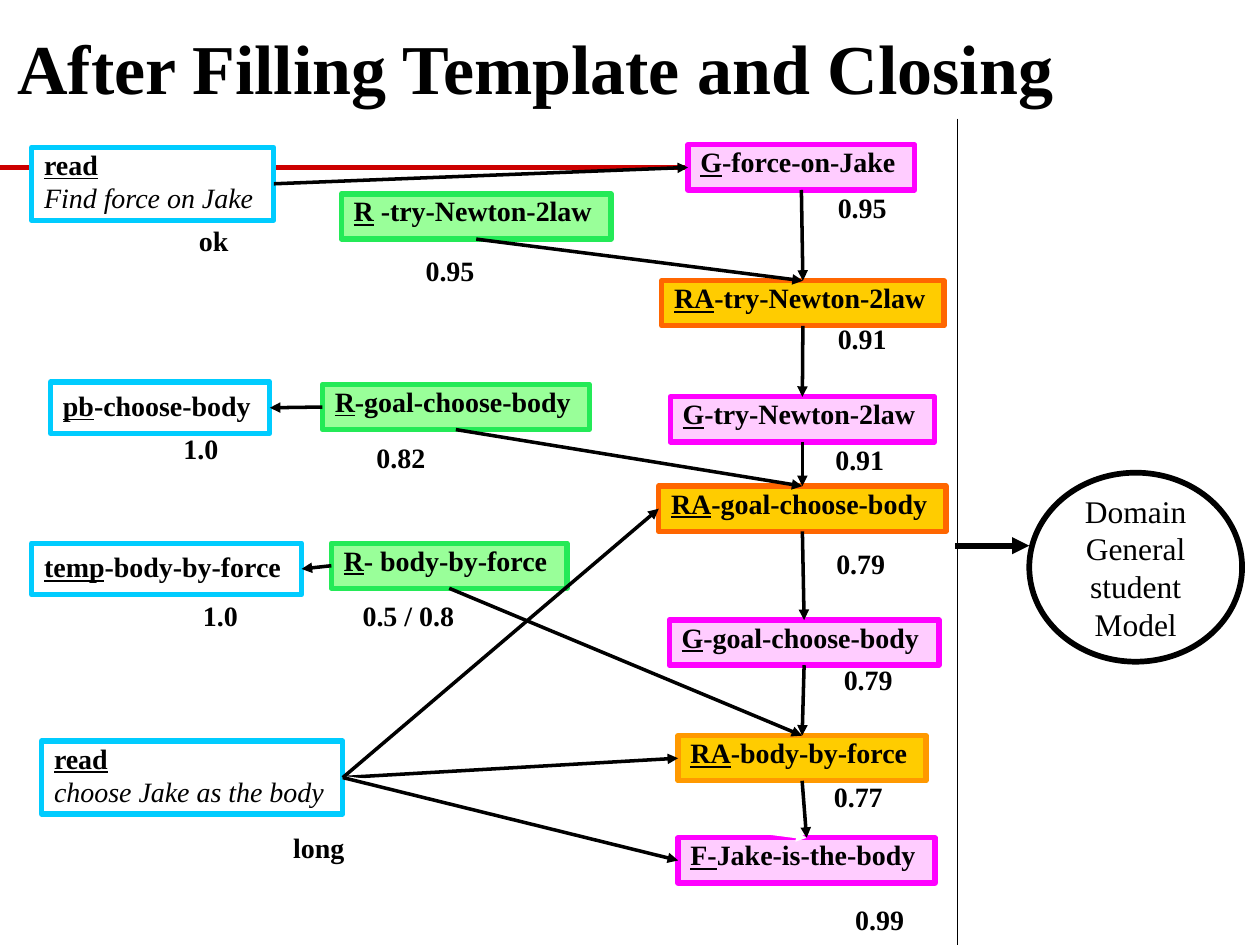
import pptx
import pptx.dml.color
import pptx.enum.shapes
import pptx.enum.text
import pptx.oxml.ns
import pptx.util
from lxml import etree
from pptx.util import Cm

FONT = "Times New Roman"
TOP, LEFT, BOTTOM, RIGHT = range(4)

# kind: fill, line
STYLES = {
    "read": ("FFFFFF", "00CCFF"),
    "rule": ("99FF99", "24EA57"),
    "goal": ("FFCCFF", "FF00FF"),
    "action": ("FFCC00", "FF6600"),
    "last action": ("FFCC00", "FF9900"),
}

# name: kind, underlined start, rest, second line, left, top, width, height, top inset
BOXES = {
    "RA goal": ("action", "RA", "-goal-choose-body", "", 13.28, 9.8, 5.79, 0.91, 0),
    "read force": ("read", "read", "", "Find force on Jake", 0.64, 2.97, 4.88, 1.47, 0),
    "read body": ("read", "read", "", "choose Jake as the body", 0.84, 14.94, 6.07, 1.47, 0),
    "F body": ("goal", "F-", "Jake-is-the-body", "", 13.67, 16.89, 5.18, 0.91, 0),
    "R goal": ("rule", "R", "-goal-choose-body", "", 6.5, 7.75, 5.38, 0.91, 0),
    "R body": ("rule", "R", "- body-by-force", "", 6.68, 10.95, 4.75, 0.91, 0),
    "RA body": ("last action", "RA", "-body-by-force", "", 13.67, 14.83, 5, 0.91, 0),
    "G goal": ("goal", "G", "-goal-choose-body", "", 13.49, 12.5, 5.44, 0.91, 0),
    "G force": ("goal", "G", "-force-on-Jake", "", 13.87, 2.92, 4.57, 0.91, 0),
    "G try": ("goal", "G", "-try-Newton-2law", "", 13.51, 8, 5.33, 0.91, 0),
    "RA try": ("action", "RA", "-try-Newton-2law", "", 13.34, 5.66, 5.69, 0.91, 0),
    "R try": ("rule", "R", " -try-Newton-2law", "", 6.88, 3.91, 5.44, 0.91, 0),
    "pb": ("read", "pb", "-choose-body", "", 1.02, 7.7, 4.42, 1.04, 0.13),
    "temp": ("read", "temp", "-body-by-force", "", 0.64, 10.95, 5.44, 1.04, 0.13),
}

# start box, side, end box, side, colour
LINKS = [
    ("R try", BOTTOM, "RA try", TOP, "000000"),
    ("G force", BOTTOM, "RA try", TOP, "000000"),
    ("RA try", BOTTOM, "G try", TOP, "000000"),
    ("R goal", BOTTOM, "RA goal", TOP, "000000"),
    ("G try", BOTTOM, "RA goal", TOP, "000000"),
    ("R body", BOTTOM, "RA body", TOP, "000000"),
    ("G goal", BOTTOM, "RA body", TOP, "000000"),
    ("RA goal", BOTTOM, "G goal", TOP, "000000"),
    ("RA body", BOTTOM, "F body", TOP, "000000"),
    ("read force", RIGHT, "G force", LEFT, "000000"),
    ("read body", RIGHT, "RA body", LEFT, "000000"),
    ("read body", RIGHT, "F body", TOP, "FFFFFF"),
    ("read body", RIGHT, "RA goal", LEFT, "000000"),
    ("R goal", LEFT, "pb", RIGHT, "000000"),
    ("R body", LEFT, "temp", RIGHT, "000000"),
    ("read body", RIGHT, "F body", LEFT, "000000"),
]

# text, left, top, width
LABELS = [
    ("ok", 3.76, 4.5, 1.12),
    ("long", 5.66, 16.74, 1.55),
    ("0.95", 16.64, 3.84, 1.5),
    ("0.91", 16.64, 6.48, 1.5),
    ("0.91", 16.59, 8.92, 1.5),
    ("0.79", 16.61, 11.02, 1.5),
    ("0.79", 16.76, 13.36, 1.5),
    ("0.77", 16.56, 15.72, 1.5),
    ("0.99", 16.99, 18.19, 1.5),
    ("0.95", 8.33, 5.11, 1.5),
    ("0.82", 7.34, 8.89, 1.5),
    ("0.5 / 0.8", 7.06, 12.07, 2.36),
    ("1.0", 3.45, 8.69, 1.22),
    ("1.0", 3.84, 12.07, 1.22),
]


def colour(code):
    return pptx.dml.color.RGBColor.from_string(code)


def set_frame(shape, top_inset=0.0):
    frame = shape.text_frame
    frame.word_wrap = False
    frame.vertical_anchor = pptx.enum.text.MSO_ANCHOR.TOP
    frame.margin_left = frame.margin_right = Cm(0.25)
    frame.margin_top, frame.margin_bottom = Cm(top_inset), Cm(0.13)
    return frame


def set_font(para, size, bold=False, italic=False):
    para.font.name = FONT
    para.font.size = pptx.util.Pt(size)
    para.font.bold = bold
    para.font.italic = italic
    para.font.color.rgb = colour("000000")


def add_text(page, text, left, top, width, height, size, top_inset=0.0):
    box = page.shapes.add_textbox(Cm(left), Cm(top), Cm(width), Cm(height))
    para = set_frame(box, top_inset).paragraphs[0]
    para.text = text
    set_font(para, size, bold=True)


def add_box(page, kind, start, rest, second, left, top, width, height, top_inset):
    box = page.shapes.add_shape(pptx.enum.shapes.MSO_SHAPE.RECTANGLE,
                                Cm(left), Cm(top), Cm(width), Cm(height))
    fill, line = STYLES[kind]
    box.shadow.inherit = False
    box.fill.solid()
    box.fill.fore_color.rgb = colour(fill)
    box.line.color.rgb = colour(line)
    box.line.width = pptx.util.Pt(3)
    frame = set_frame(box, top_inset)
    para = frame.paragraphs[0]
    para.alignment = pptx.enum.text.PP_ALIGN.LEFT
    set_font(para, 16, bold=True)
    span = para.add_run()
    span.text = start
    span.font.underline = True
    if rest:
        para.add_run().text = rest
    if second:
        frame.margin_bottom = 0
        para = frame.add_paragraph()
        para.text = second
        para.alignment = pptx.enum.text.PP_ALIGN.LEFT
        set_font(para, 16, italic=True)
    return box


def add_line(page, start, end, code="000000", width=2.0, arrow=False):
    line = page.shapes.add_connector(pptx.enum.shapes.MSO_CONNECTOR.STRAIGHT,
                                     *(Cm(value) for value in (*start, *end)))
    line.line.color.rgb = colour(code)
    line.line.width = pptx.util.Pt(width)
    if arrow:
        etree.SubElement(line.line._get_or_add_ln(),
                         pptx.oxml.ns.qn("a:tailEnd"), type="triangle")
    etree.SubElement(line._element.spPr, pptx.oxml.ns.qn("a:effectLst"))
    return line


def add_link(page, start_box, start_side, end_box, end_side, code):
    """Join the sides of two boxes with an arrow."""
    link = add_line(page, (0, 0), (1, 1), code, arrow=True)
    link.begin_connect(start_box, start_side)
    link.end_connect(end_box, end_side)


def add_model(page):
    """Add the ellipse for the student model."""
    model = page.shapes.add_shape(pptx.enum.shapes.MSO_SHAPE.OVAL,
                                  Cm(20.75), Cm(9.53), Cm(4.29), Cm(3.81))
    model.shadow.inherit = False
    model.fill.background()
    model.line.color.rgb = colour("000000")
    model.line.width = pptx.util.Pt(3.25)
    frame = set_frame(model, 0.13)
    frame.vertical_anchor = pptx.enum.text.MSO_ANCHOR.MIDDLE
    frame.text = "Domain\nGeneral\nstudent\nModel"
    for para in frame.paragraphs:
        para.alignment = pptx.enum.text.PP_ALIGN.CENTER
        set_font(para, 18)


def main():
    deck = pptx.Presentation()
    deck.slide_width, deck.slide_height = Cm(25.4), Cm(19.05)
    page = deck.slides.add_slide(deck.slide_layouts[6])
    add_line(page, (0, 3.38), (18.21, 3.38), "CC0000", 3)
    boxes = {name: add_box(page, *values) for name, values in BOXES.items()}
    for start, start_side, end, end_side, code in LINKS:
        add_link(page, boxes[start], start_side, boxes[end], end_side, code)
    for text, left, top, width in LABELS:
        add_text(page, text, left, top, width, 0.82, 16)
    add_line(page, (19.3, 2.39), (19.3, 19.05), width=1)
    add_model(page)
    add_line(page, (19.25, 11), (20.75, 11), width=3.25, arrow=True)
    add_text(page, "After Filling Template and Closing", 0.1, 0.36, 21.62, 1.96, 40, 0.13)
    deck.save("out.pptx")


if __name__ == "__main__":
    main()
